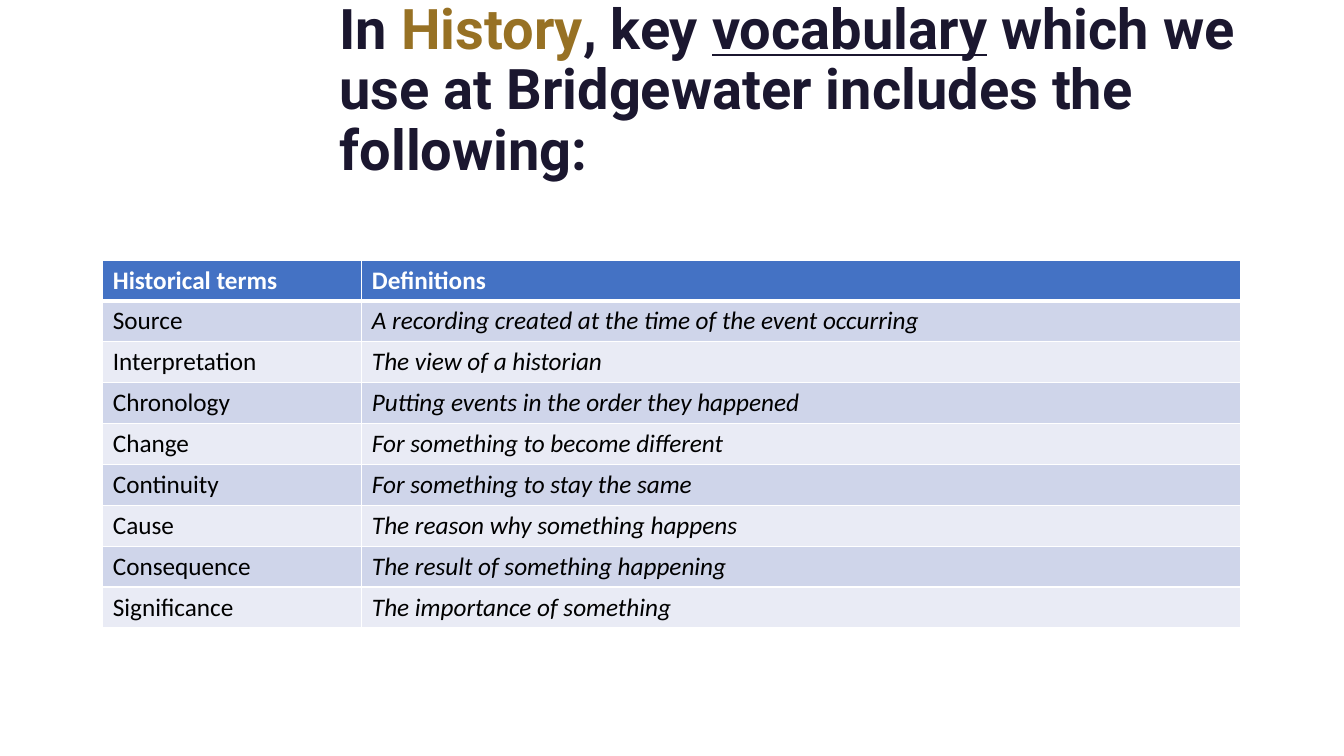
from lxml import etree
from pptx import Presentation
from pptx import util as u
from pptx.dml import color
from pptx.enum import text
from pptx.oxml import ns

COLOURS = {
    "ink": "1B172F",
    "gold": "977124",
    "header": "4472C4",
    "odd": "CFD5EA",
    "even": "E9EBF5",
    "white": "FFFFFF",
    "black": "000000",
}

TITLE = [
    ("In ", {}),
    ("History", {"colour": "gold"}),
    (", key ", {}),
    ("vocabulary", {"underline": True}),
    (" which we use at Bridgewater includes the following:", {}),
]

VOCABULARY = [
    ("Historical terms", "Definitions"),
    ("Source", "A recording created at the time of the event occurring"),
    ("Interpretation", "The view of a historian"),
    ("Chronology", "Putting events in the order they happened"),
    ("Change", "For something to become different"),
    ("Continuity", "For something to stay the same"),
    ("Cause", "The reason why something happens"),
    ("Consequence", "The result of something happening"),
    ("Significance", "The importance of something"),
]


def rgb(name):
    return color.RGBColor.from_string(COLOURS[name])


def add_text(paragraph, content, font="Calibri", size=18, colour="black",
             bold=False, italic=False, underline=False):
    run = paragraph.add_run()
    run.text = content
    run.font.name = font
    run.font.size = u.Pt(size)
    run.font.color.rgb = rgb(colour)
    run.font.bold = bold
    run.font.italic = italic
    run.font.underline = underline


class Page:
    """Draws styled elements on one slide, measured on a 100 by 100 grid."""

    def __init__(self, presentation):
        self.column = presentation.slide_width / 100
        self.row = presentation.slide_height / 100
        self.slide = presentation.slides.add_slide(presentation.slide_layouts[6])

    def area(self, left, top, width, height):
        return (round(left * self.column), round(top * self.row),
                round(width * self.column), round(height * self.row))

    def title(self, pieces, *area):
        shape = self.slide.shapes.add_textbox(*self.area(*area))
        frame = shape.text_frame
        frame.word_wrap = True
        frame.vertical_anchor = text.MSO_ANCHOR.BOTTOM
        paragraph = frame.paragraphs[0]
        paragraph.line_spacing = 0.9
        for content, style in pieces:
            add_text(paragraph, content,
                     **{"font": "Roboto", "size": 40, "colour": "ink", "bold": True, **style})

    def borders(self, cell, bottom):
        properties = cell._tc.get_or_add_tcPr()
        for side, points in (("L", 1), ("R", 1), ("T", 1), ("B", bottom)):
            line = etree.SubElement(properties, ns.qn(f"a:ln{side}"), w=str(u.Pt(points)))
            fill = etree.SubElement(line, ns.qn("a:solidFill"))
            etree.SubElement(fill, ns.qn("a:srgbClr"), val=COLOURS["white"])

    def table(self, rows, widths, left, top, height):
        area = self.area(left, top, sum(widths), height)
        table = self.slide.shapes.add_table(len(rows), len(widths), *area).table
        table.horz_banding = False
        for column, width in zip(table.columns, widths):
            column.width = round(width * self.column)
        for i, entries in enumerate(rows):
            heading = i == 0
            fill = "header" if heading else ("even", "odd")[i % 2]
            for j, content in enumerate(entries):
                cell = table.cell(i, j)
                self.borders(cell, 3 if heading else 1)
                cell.fill.solid()
                cell.fill.fore_color.rgb = rgb(fill)
                add_text(cell.text_frame.paragraphs[0], content, bold=heading,
                         colour="white" if heading else "black",
                         italic=j == 1 and not heading)


def main():
    presentation = Presentation()
    presentation.slide_width = u.Inches(13.33)
    presentation.slide_height = u.Inches(7.5)
    page = Page(presentation)
    page.title(TITLE, 24.53, 2.8, 74.27, 22)
    page.table(VOCABULARY, (19.28, 65.38), 7.65, 34.4, 48.67)
    presentation.save("out.pptx")


if __name__ == "__main__":
    main()
